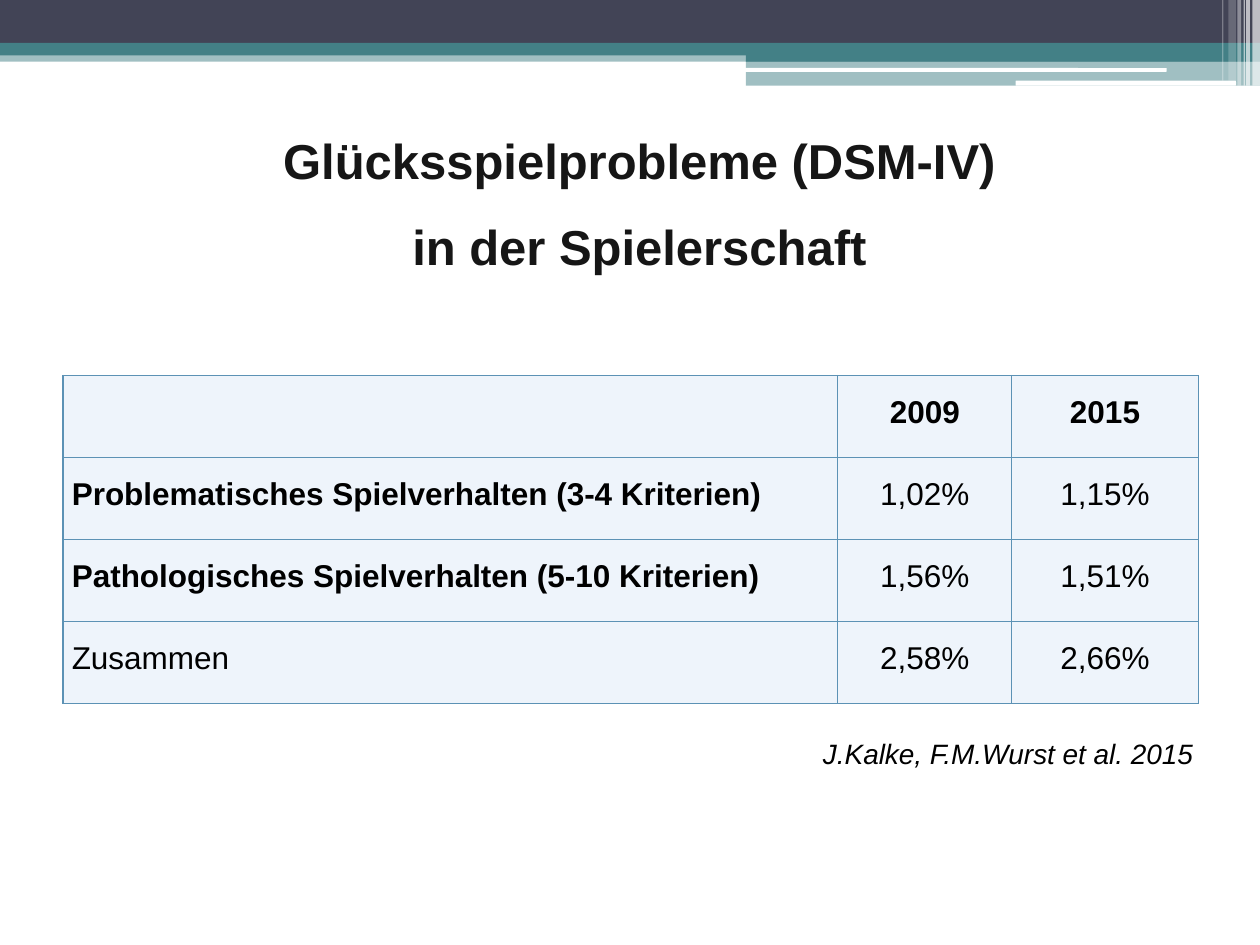
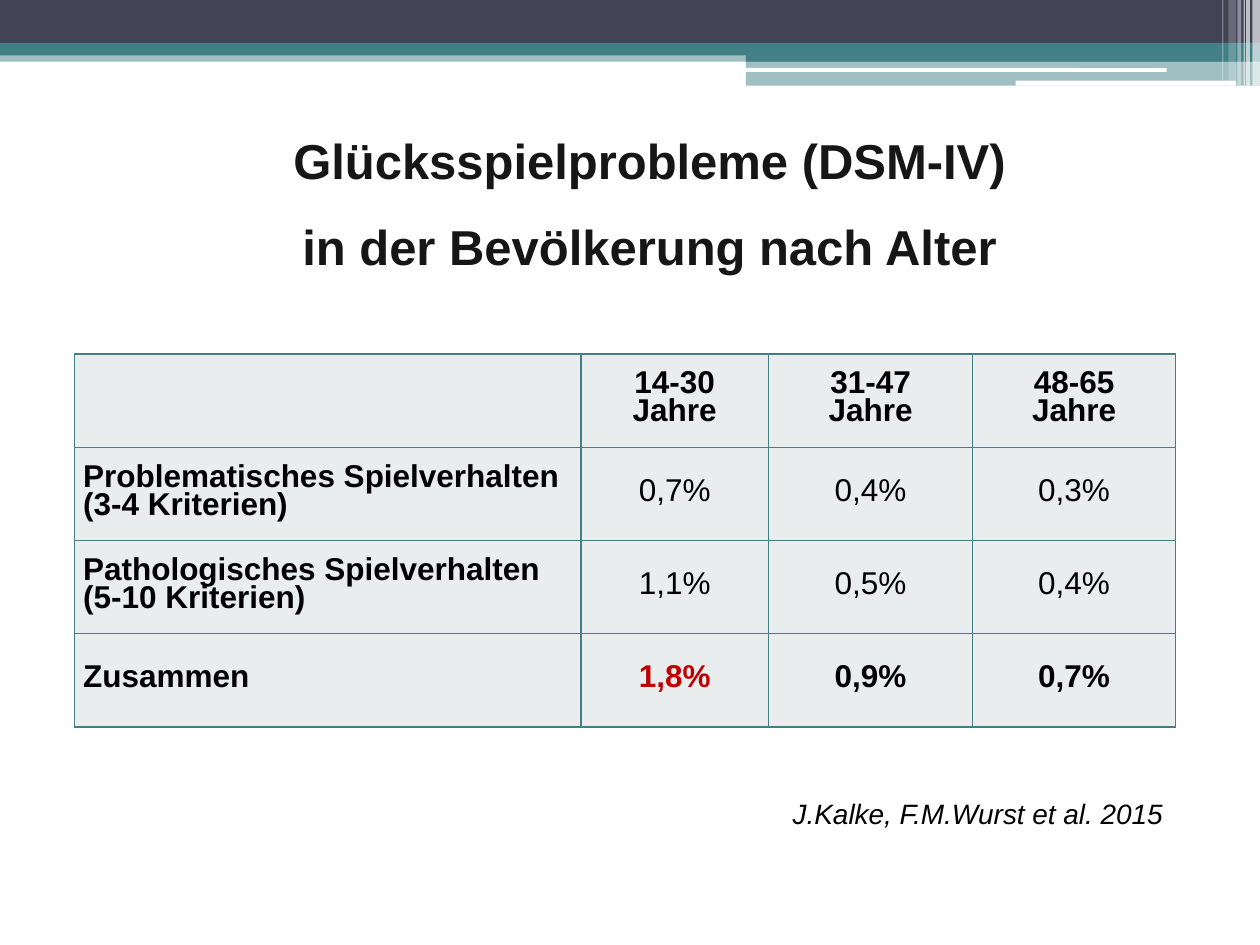
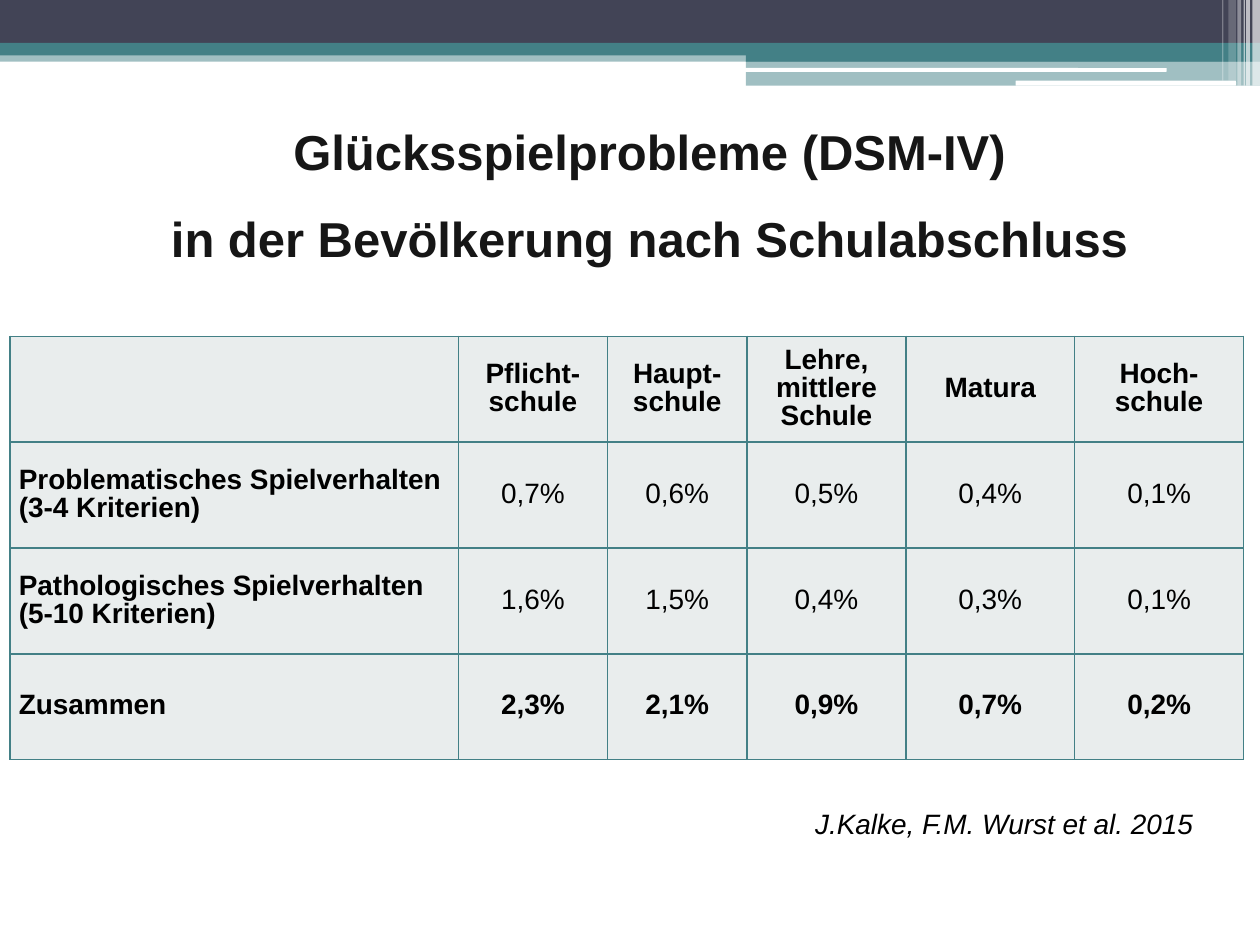
from lxml import etree
from pptx import Presentation
from pptx.dml.color import RGBColor
from pptx.enum import shapes, text
from pptx.oxml import ns
from pptx.util import Inches, Pt

FONT = "Arial"
SLATE = RGBColor(0x42, 0x44, 0x56)
TEAL = RGBColor(0x43, 0x80, 0x86)
WHITE = RGBColor(0xFF, 0xFF, 0xFF)
BLACK = RGBColor(0, 0, 0)
TITLE = RGBColor(0x16, 0x16, 0x16)
RED = RGBColor(0xC0, 0, 0)
BLUE = RGBColor(0x5C, 0x92, 0xB5)
PALE_BLUE = RGBColor(0xEE, 0xF4, 0xFB)
PALE_GREY = RGBColor(0xE9, 0xED, 0xED)

RECT = shapes.MSO_SHAPE.RECTANGLE
ROUND = shapes.MSO_SHAPE.ROUNDED_RECTANGLE
LEFT = text.PP_ALIGN.LEFT
CENTER = text.PP_ALIGN.CENTER
RIGHT = text.PP_ALIGN.RIGHT

BANDS = [
    (RECT, (0, 0.4, 10, 0.09), TEAL, 50),
    (RECT, (0, 0, 10, 0.34), SLATE, 100),
    (RECT, (0, 0.34, 10, 0.1), TEAL, 100),
    (RECT, (5.92, 0.39, 4.08, 0.1), TEAL, 100),
    (RECT, (5.92, 0.48, 4.08, 0.2), TEAL, 50),
    (ROUND, (5.91, 0.54, 3.35, 0.03), WHITE, 100),
    (ROUND, (8.06, 0.64, 1.75, 0.04), WHITE, 100),
]
STRIPES = [
    (9.94, 0.06, 0.68, 65),
    (9.89, 0.03, 0.68, 65),
    (9.87, 0.01, 0.68, 60),
    (9.82, 0.03, 0.68, 40),
    (9.75, 0.06, 0.64, 20),
    (9.7, 0.01, 0.64, 30),
]


def add_block(s, kind, box, color, opacity=100):
    sp = s.shapes.add_shape(kind, *map(Inches, box))
    sp.shadow.inherit = False
    sp.fill.solid()
    sp.fill.fore_color.rgb = color
    sp.line.fill.background()
    if opacity < 100:
        clr = sp.element.spPr.find(".//" + ns.qn("a:srgbClr"))
        etree.SubElement(clr, ns.qn("a:alpha"), val=str(opacity * 1000))
    return sp


def add_run(p, words, size, color, bold=False, italic=False):
    r = p.add_run()
    r.text = words
    r.font.name = FONT
    r.font.size = Pt(size)
    r.font.color.rgb = color
    r.font.bold = bold
    r.font.italic = italic


def paragraphs(tf, lines):
    for i, line in enumerate(lines):
        yield (tf.add_paragraph() if i else tf.paragraphs[0]), line


def add_header(s):
    for band in BANDS:
        add_block(s, *band)
    for x, width, height, opacity in STRIPES:
        add_block(s, RECT, (x, 0, width, height), WHITE, opacity)


def add_title(s, x, y, lines):
    sp = add_block(s, RECT, (x, y, 8.03, 1.28), WHITE)
    tf = sp.text_frame
    tf.word_wrap = True
    tf.vertical_anchor = text.MSO_ANCHOR.MIDDLE
    for p, line in paragraphs(tf, lines):
        p.alignment = CENTER
        p.space_before = Pt(0 if line == lines[0] else 16)
        add_run(p, line, 28, TITLE, bold=True)


def set_borders(cell, color, width):
    tc_pr = cell._tc.get_or_add_tcPr()
    for i, side in enumerate(("lnL", "lnR", "lnT", "lnB")):
        ln = etree.Element(ns.qn("a:" + side), w=str(Pt(width)))
        fill = etree.SubElement(ln, ns.qn("a:solidFill"))
        etree.SubElement(fill, ns.qn("a:srgbClr"), val=str(color))
        tc_pr.insert(i, ln)


def add_grid(s, x, y, widths, row_height, rows, size=18, fill=PALE_GREY,
             border=TEAL, border_width=1, bold_total=True, highlight=None):
    box = (x, y, sum(widths), row_height * len(rows))
    table = s.shapes.add_table(len(rows), len(widths), *map(Inches, box)).table
    for column, width in zip(table.columns, widths):
        column.width = Inches(width)
    for i, row in enumerate(rows):
        table.rows[i].height = Inches(row_height)
        is_total = i == len(rows) - 1
        for j, words in enumerate(row):
            cell = table.cell(i, j)
            cell.fill.solid()
            cell.fill.fore_color.rgb = fill
            set_borders(cell, border, border_width)
            cell.margin_left = cell.margin_right = Inches(0.07)
            cell.margin_top = cell.margin_bottom = 0
            cell.vertical_anchor = text.MSO_ANCHOR.MIDDLE
            if not words:
                continue
            bold = bold_total if is_total else i == 0 or j == 0
            color = RED if (i, j) == highlight else BLACK
            for p, line in paragraphs(cell.text_frame, words.split("\n")):
                p.alignment = CENTER if j else LEFT
                p.line_spacing = Pt(16)
                add_run(p, line, size, color, bold)


def add_source(s, x, y, words):
    sp = s.shapes.add_textbox(Inches(x), Inches(y), Inches(4.33), Inches(0.37))
    sp.text_frame.word_wrap = True
    p = sp.text_frame.paragraphs[0]
    p.alignment = RIGHT
    add_run(p, words, 16, BLACK, italic=True)


def add_slide(prs):
    s = prs.slides.add_slide(prs.slide_layouts[6])
    add_header(s)
    return s


def players_slide(prs):
    s = add_slide(prs)
    add_title(s, 1.06, 0.97, ["Glücksspielprobleme (DSM-IV)", "in der Spielerschaft"])
    add_grid(s, 0.5, 2.98, [6.15, 1.38, 1.48], 0.65, [
        ["", "2009", "2015"],
        ["Problematisches Spielverhalten (3-4 Kriterien)", "1,02%", "1,15%"],
        ["Pathologisches Spielverhalten (5-10 Kriterien)", "1,56%", "1,51%"],
        ["Zusammen", "2,58%", "2,66%"],
    ], fill=PALE_BLUE, border=BLUE, border_width=0.75, bold_total=False)
    add_source(s, 5.24, 5.8, "J.Kalke, F.M.Wurst et al. 2015")


def age_slide(prs):
    s = add_slide(prs)
    add_title(s, 1.14, 0.97,
              ["Glücksspielprobleme (DSM-IV)", "in der Bevölkerung nach Alter"])
    add_grid(s, 0.59, 2.81, [4.02, 1.49, 1.62, 1.61], 0.74, [
        ["", "14-30 Jahre", "31-47\nJahre", "48-65\nJahre"],
        ["Problematisches Spielverhalten\n(3-4 Kriterien)", "0,7%", "0,4%", "0,3%"],
        ["Pathologisches Spielverhalten\n(5-10 Kriterien)", "1,1%", "0,5%", "0,4%"],
        ["Zusammen", "1,8%", "0,9%", "0,7%"],
    ], highlight=(3, 1))
    add_source(s, 5, 6.27, "J.Kalke, F.M.Wurst et al. 2015")


def education_slide(prs):
    s = add_slide(prs)
    add_title(s, 1.14, 0.9,
              ["Glücksspielprobleme (DSM-IV)", "in der Bevölkerung nach Schulabschluss"])
    add_grid(s, 0.08, 2.67, [3.56, 1.18, 1.11, 1.26, 1.34, 1.34], 0.84, [
        ["", "Pflicht-schule", "Haupt-schule", "Lehre, mittlere Schule", "Matura",
         "Hoch-schule"],
        ["Problematisches Spielverhalten\n(3-4 Kriterien)",
         "0,7%", "0,6%", "0,5%", "0,4%", "0,1%"],
        ["Pathologisches Spielverhalten\n(5-10 Kriterien)",
         "1,6%", "1,5%", "0,4%", "0,3%", "0,1%"],
        ["Zusammen", "2,3%", "2,1%", "0,9%", "0,7%", "0,2%"],
    ], size=16)
    add_source(s, 5.24, 6.35, "J.Kalke, F.M. Wurst et al. 2015")


def main():
    prs = Presentation()
    prs.slide_width = Inches(10)
    prs.slide_height = Inches(7.5)
    players_slide(prs)
    age_slide(prs)
    education_slide(prs)
    prs.save("out.pptx")


if __name__ == "__main__":
    main()
